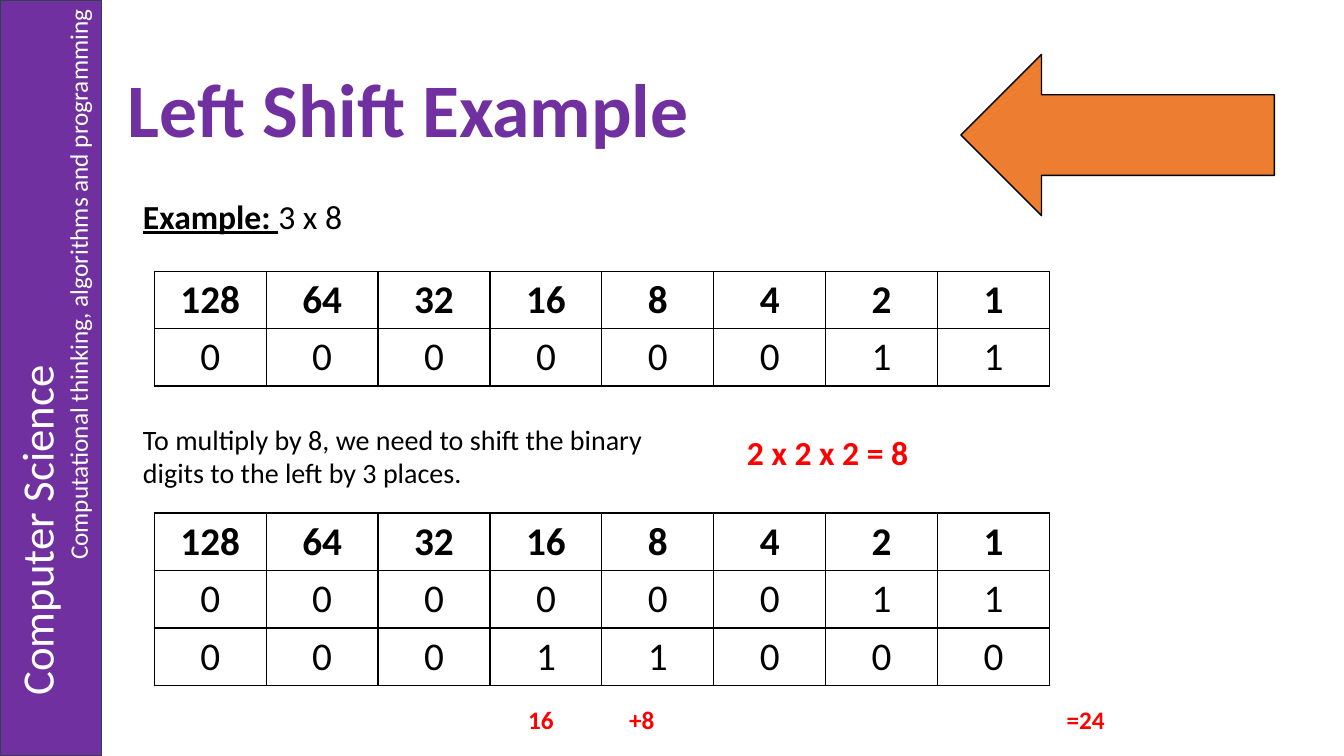
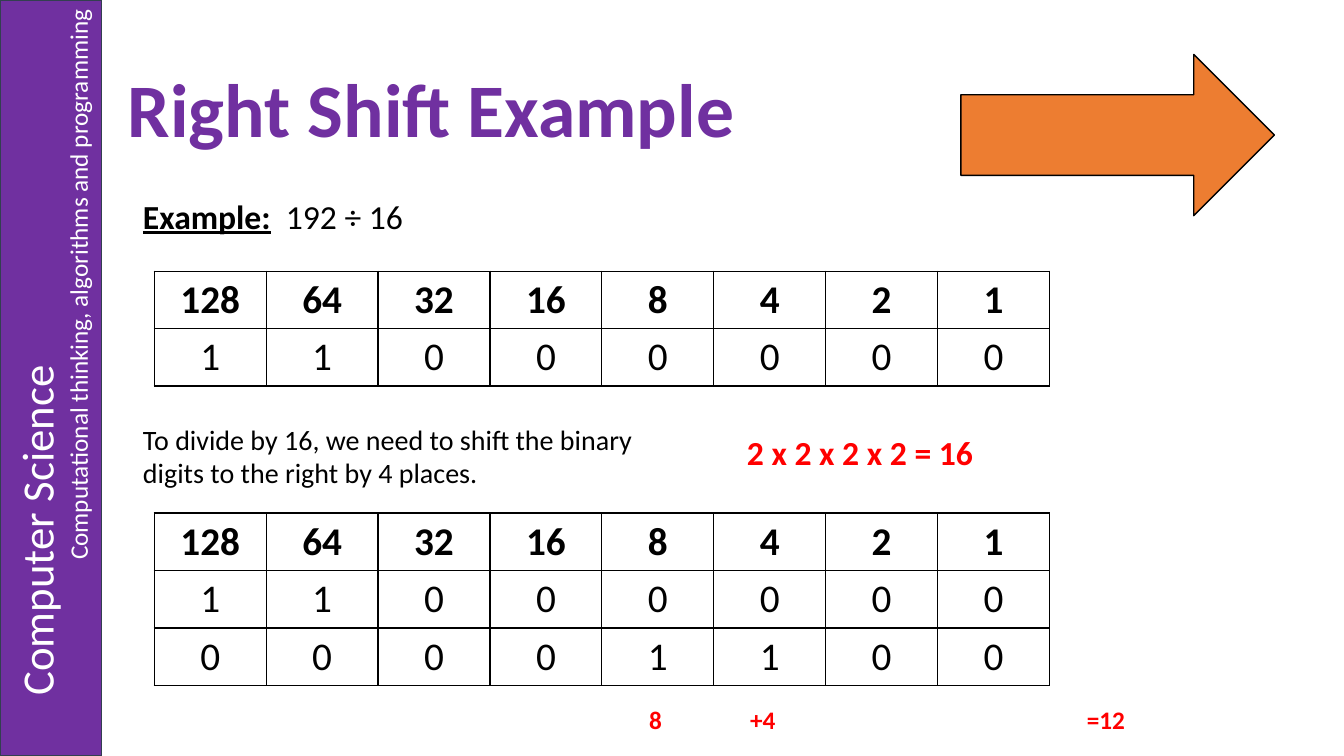
from dataclasses import dataclass

from lxml import etree
from pptx import Presentation
from pptx import util as u
from pptx.dml.color import RGBColor
from pptx.enum import shapes, text
from pptx.oxml import ns


@dataclass(frozen=True)
class Theme:
    font: str = "Calibri"
    purple: str = "7030A0"
    slate: str = "333F50"
    orange: str = "ED7D31"
    red: str = "FF0000"
    black: str = "000000"
    white: str = "FFFFFF"
    title: int = 54
    subject: int = 32
    digits: int = 28
    lead: int = 24
    body: int = 20
    small: int = 18
    line: int = 1


@dataclass(frozen=True)
class Box:
    left: float
    top: float
    width: float
    height: float

    def lengths(self) -> tuple:
        return tuple(u.Inches(n) for n in (self.left, self.top, self.width, self.height))


@dataclass(frozen=True)
class ShiftExample:
    title: str
    label: str
    problem: str
    explanation: str
    factors: str
    start: int
    result: int
    total: str
    total_left: float
    total_tabs: tuple[float, ...]
    arrow: shapes.MSO_SHAPE


THEME = Theme()
SUBJECT = "Computer Science"
TOPIC = "Computational thinking, algorithms and programming"
BITS = 8
COLUMN_WIDTH = 1.11
ROW_HEIGHT = 0.57
TABLE_LEFT = 1.53

EXAMPLES = [
    ShiftExample(
        title="Left Shift Example",
        label="Example: ",
        problem="3 x 8",
        explanation="To multiply by 8, we need to shift the binary digits to the left by 3 places.",
        factors="2 x 2 x 2 = 8",
        start=3,
        result=3 << 3,
        total="16\t+8\t=24",
        total_left=5.14,
        total_tabs=(1, 5.34),
        arrow=shapes.MSO_SHAPE.LEFT_ARROW,
    ),
    ShiftExample(
        title="Right Shift Example",
        label="Example:",
        problem="  192 ÷ 16",
        explanation="To divide by 16, we need to shift the binary digits to the right by 4 places.",
        factors="2 x 2 x 2 x 2 = 16",
        start=192,
        result=192 >> 4,
        total="8\t+4\t=12",
        total_left=6.34,
        total_tabs=(1, 4.34),
        arrow=shapes.MSO_SHAPE.RIGHT_ARROW,
    ),
]


def style_runs(paragraph, size: int, color: str, bold: bool = False) -> None:
    for run in paragraph.runs:
        run.font.name = THEME.font
        run.font.size = u.Pt(size)
        run.font.bold = bold
        run.font.color.rgb = RGBColor.from_string(color)


def add_text(slide, box: Box, content: str, size: int, color: str, bold: bool = False):
    frame = slide.shapes.add_textbox(*box.lengths()).text_frame
    frame.word_wrap = True
    frame.text = content
    style_runs(frame.paragraphs[0], size, color, bold)
    return frame


def add_filled(slide, kind: shapes.MSO_SHAPE, box: Box, fill: str, line: str):
    shape = slide.shapes.add_shape(kind, *box.lengths())
    shape.shadow.inherit = False
    shape.fill.solid()
    shape.fill.fore_color.rgb = RGBColor.from_string(fill)
    shape.line.color.rgb = RGBColor.from_string(line)
    shape.line.width = u.Pt(THEME.line)
    return shape


def add_band(slide) -> None:
    band = add_filled(slide, shapes.MSO_SHAPE.RECTANGLE, Box(0, 0, 1.01, 7.5),
                      THEME.purple, THEME.slate)
    frame = band.text_frame
    frame.text = f"\t{SUBJECT}\n{TOPIC}"
    frame.vertical_anchor = text.MSO_ANCHOR.MIDDLE
    next(band.element.iter(ns.qn("a:bodyPr"))).set("vert", "vert270")
    subject, topic = frame.paragraphs
    subject.alignment = text.PP_ALIGN.LEFT
    topic.alignment = text.PP_ALIGN.RIGHT
    style_runs(subject, THEME.subject, THEME.white)
    style_runs(topic, THEME.small, THEME.white)


def add_title(slide, title: str) -> None:
    frame = add_text(slide, Box(1.17, 0.4, 11.25, 1.45), title, THEME.title, THEME.purple, True)
    frame.vertical_anchor = text.MSO_ANCHOR.MIDDLE
    frame.paragraphs[0].line_spacing = 0.9


def add_problem(slide, label: str, problem: str) -> None:
    frame = add_text(slide, Box(1.32, 1.89, 9.3, 0.5), label, THEME.lead, THEME.black)
    paragraph = frame.paragraphs[0]
    paragraph.add_run().text = problem
    style_runs(paragraph, THEME.lead, THEME.black)
    paragraph.runs[0].font.bold = True
    paragraph.runs[0].font.underline = True


def set_borders(cell) -> None:
    properties = cell._tc.get_or_add_tcPr()
    for side in ("lnL", "lnR", "lnT", "lnB"):
        border = etree.SubElement(properties, ns.qn(f"a:{side}"), w=str(u.Pt(THEME.line)))
        fill = etree.SubElement(border, ns.qn("a:solidFill"))
        etree.SubElement(fill, ns.qn("a:srgbClr"), val=THEME.black)


def add_binary_table(slide, top: float, numbers: list[int]) -> None:
    place_values = [str(2 ** power) for power in reversed(range(BITS))]
    rows = [place_values] + [list(f"{number:0{BITS}b}") for number in numbers]
    box = Box(TABLE_LEFT, top, BITS * COLUMN_WIDTH, len(rows) * ROW_HEIGHT)
    table = slide.shapes.add_table(len(rows), BITS, *box.lengths()).table
    table.first_row = False
    table.horz_banding = False
    for row_index, row in enumerate(rows):
        for column_index, digit in enumerate(row):
            cell = table.cell(row_index, column_index)
            set_borders(cell)
            cell.fill.background()
            cell.text_frame.text = digit
            paragraph = cell.text_frame.paragraphs[0]
            paragraph.alignment = text.PP_ALIGN.CENTER
            style_runs(paragraph, THEME.digits, THEME.black, row_index == 0)


def add_total(slide, example: ShiftExample) -> None:
    frame = add_text(slide, Box(example.total_left, 6.94, 6.51, 0.4), example.total,
                     THEME.small, THEME.red, True)
    properties = frame.paragraphs[0]._p.get_or_add_pPr()
    stops = etree.SubElement(properties, ns.qn("a:tabLst"))
    for position in example.total_tabs:
        etree.SubElement(stops, ns.qn("a:tab"), pos=str(u.Inches(position)), algn="l")


def add_example(deck, example: ShiftExample) -> None:
    slide = deck.slides.add_slide(deck.slide_layouts[6])
    add_band(slide)
    add_title(slide, example.title)
    add_binary_table(slide, 2.69, [example.start])
    add_problem(slide, example.label, example.problem)
    add_text(slide, Box(1.32, 4.14, 5.37, 0.77), example.explanation, THEME.body, THEME.black)
    add_text(slide, Box(7.31, 4.24, 4.44, 0.5), example.factors, THEME.lead, THEME.red, True)
    add_binary_table(slide, 5.09, [example.start, example.result])
    add_total(slide, example)
    add_filled(slide, example.arrow, Box(9.53, 0.54, 3.11, 1.6), THEME.orange, THEME.black)


def main() -> None:
    deck = Presentation()
    deck.slide_width = u.Inches(13.33)
    deck.slide_height = u.Inches(7.5)
    for example in EXAMPLES:
        add_example(deck, example)
    deck.save("out.pptx")


if __name__ == "__main__":
    main()
